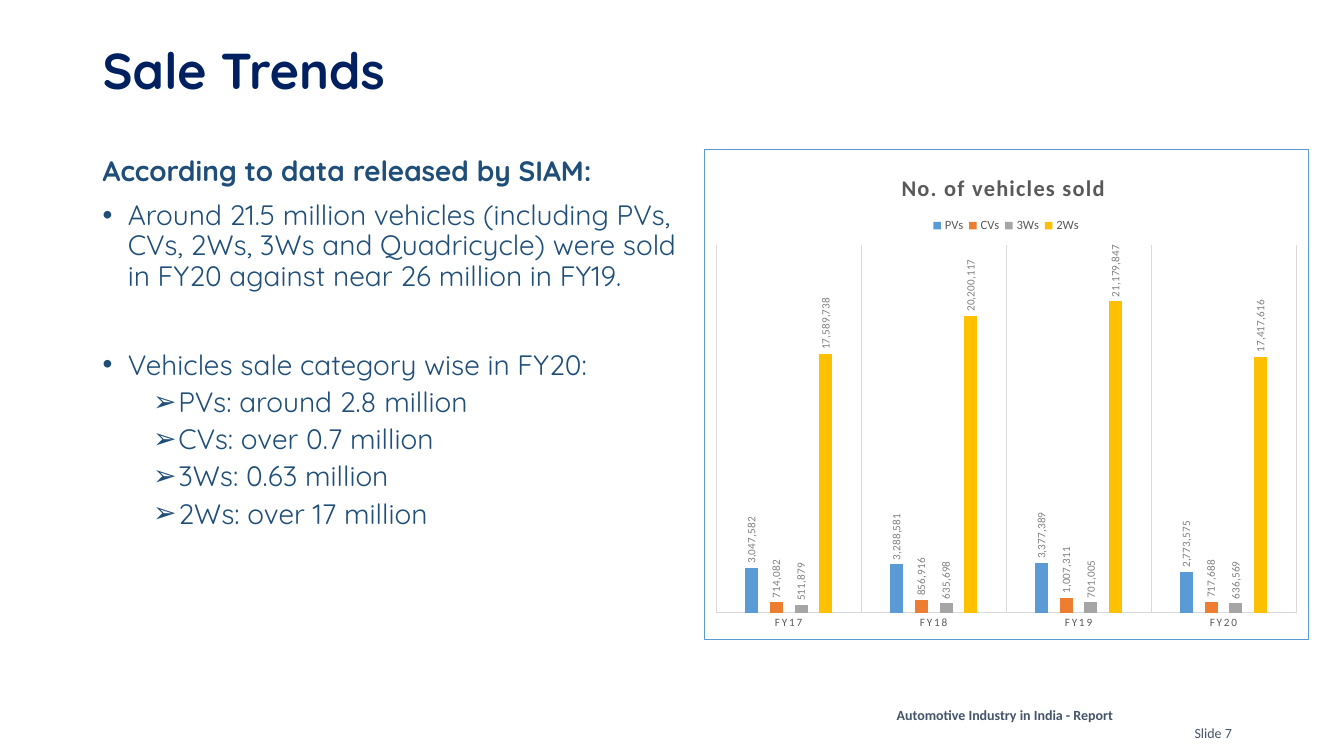
from lxml import etree
from pptx import Presentation
from pptx import util as u
from pptx.chart.data import CategoryChartData
from pptx.dml.color import RGBColor
from pptx.enum import chart as charts, text
from pptx.oxml import parse_xml
from pptx.oxml.ns import nsdecls, qn

# Content
TITLE = "Sale Trends"
FOOTER = "Automotive Industry in India - Report"
SLIDE_NUMBER = "Slide 7"
# (style, text, space before in points)
BODY = [
    ("heading", "According to data released by SIAM:", 0),
    ("bullet", "Around 21.5 million vehicles (including PVs, CVs, 2Ws, 3Ws and "
               "Quadricycle) were sold in FY20 against near 26 million in FY19.", 10),
    ("bullet", "Vehicles sale category wise in FY20:", 42),
    ("arrow", "PVs: around 2.8 million", 5),
    ("arrow", "CVs: over 0.7 million", 5),
    ("arrow", "3Ws: 0.63 million", 5),
    ("arrow", "2Ws: over 17 million", 5),
]
CHART_TITLE = "No. of vehicles sold"
YEARS = ["FY17", "FY18", "FY19", "FY20"]
SALES = {  # name: (colour, values)
    "PVs": ("5B9BD5", [3047582, 3288581, 3377389, 2773575]),
    "CVs": ("ED7D31", [714082, 856916, 1007311, 717688]),
    "3Ws": ("A5A5A5", [511879, 635698, 701005, 636569]),
    "2Ws": ("FFC000", [17589738, 20200117, 21179847, 17417616]),
}

# Formats
NAVY, BLUE, SLATE, GREY, RULE = "002060", "1F4E79", "44546A", "595959", "D9D9D9"
TITLE_FONT = dict(name="Quicksand", size=36, bold=True, color=NAVY)
BODY_FONT = dict(name="Quicksand", size=20, bold=False, color=BLUE)
FOOTER_FONT = dict(name="Calibri", size=10, color=SLATE)
CHART_FONT = dict(name="Calibri", size=10, color="000000")
BULLETS = {"bullet": ("•", 0.25, 0), "arrow": ("➢", 0.75, 1)}  # sign, indent, level
HANGING = 0.25
LEFT, TOP = 0.92, 0.4

# Shares of the chart's frame: left, top, width, height
PLOT_AREA = (0.02, 0.195, 0.96, 0.75)
LEGEND_AREA = (0.37, 0.135, 0.26, 0.04)
TITLE_AREA = (0.32, 0.04)


def rgb(value):
    return RGBColor.from_string(value)


def style(font, **values):
    for name, value in values.items():
        if name == "color":
            font.color.rgb = rgb(value)
        else:
            setattr(font, name, u.Pt(value) if name == "size" else value)


def add_text(slide, box, words, font, align=text.PP_ALIGN.LEFT, wrap=True):
    shape = slide.shapes.add_textbox(*map(u.Inches, box))
    shape.text_frame.word_wrap = wrap
    paragraph = shape.text_frame.paragraphs[0]
    paragraph.text, paragraph.alignment = words, align
    style(paragraph.runs[0].font, **font)
    return shape.text_frame


def add_bullet(paragraph, sign, indent, level):
    paragraph.level = level
    properties = paragraph._p.get_or_add_pPr()
    properties.set("marL", str(u.Inches(indent)))
    properties.set("indent", str(-u.Inches(HANGING)))
    for xml in (f'<a:buClr {nsdecls("a")}><a:srgbClr val="{BLUE}"/></a:buClr>',
                f'<a:buFont {nsdecls("a")} typeface="Arial"/>',
                f'<a:buChar {nsdecls("a")} char="{sign}"/>'):
        properties.append(parse_xml(xml))


def place(element, area, inner=False):
    """Lay out a chart part by shares of the chart's frame."""
    for old in element.findall(qn("c:layout")):
        element.remove(old)
    layout = etree.Element(qn("c:layout"))
    manual = etree.SubElement(layout, qn("c:manualLayout"))
    marks = [("layoutTarget", "inner")] if inner else []
    marks += [("xMode", "edge"), ("yMode", "edge")] + list(zip("xywh", area))
    for name, value in marks:
        etree.SubElement(manual, qn("c:" + name)).set("val", str(value))
    overlay = element.find(qn("c:overlay"))
    if overlay is None:
        element.insert(0, layout)
    else:
        overlay.addprevious(layout)


def add_sales_chart(slide, box):
    data = CategoryChartData(number_format="#,##0")
    data.categories = YEARS
    for name, (_, values) in SALES.items():
        data.add_series(name, values)
    chart = slide.shapes.add_chart(charts.XL_CHART_TYPE.COLUMN_CLUSTERED,
                                   *map(u.Inches, box), data).chart
    style(chart.font, **CHART_FONT)

    # Title and legend
    chart.has_title = chart.has_legend = True
    run = chart.chart_title.text_frame.paragraphs[0].add_run()
    run.text = CHART_TITLE
    style(run.font, name="Calibri", size=16, bold=True, color=GREY)
    run._r.get_or_add_rPr().set("spc", "100")
    chart.legend.position = charts.XL_LEGEND_POSITION.TOP
    chart.legend.include_in_layout = False
    style(chart.legend.font, name="Calibri", size=9, color=GREY)

    # Axes
    years, values = chart.category_axis, chart.value_axis
    values.visible = values.has_major_gridlines = False
    values.minimum_scale, values.maximum_scale = 0, 25_000_000
    years.has_major_gridlines = True
    years.major_tick_mark = charts.XL_TICK_MARK.NONE
    style(years.tick_labels.font, name="Calibri", size=8, color=GREY)
    years._element.find(".//" + qn("a:defRPr")).set("spc", "120")
    for line in (years.format.line, years.major_gridlines.format.line):
        line.color.rgb, line.width = rgb(RULE), u.Pt(0.75)

    # Columns with upright labels
    plot = chart.plots[0]
    plot.gap_width, plot.overlap, plot.vary_by_categories = 444, -90, False
    for series in plot.series:
        series.format.fill.solid()
        series.format.fill.fore_color.rgb = rgb(SALES[series.name][0])
        labels = series.data_labels
        labels.show_value = True
        labels.number_format, labels.number_format_is_linked = "#,##0", False
        labels.position = charts.XL_LABEL_POSITION.OUTSIDE_END
        style(labels.font, name="Calibri", size=8, color="808080")
        turn = labels._element.find(".//" + qn("a:bodyPr"))
        turn.set("rot", "-5400000")
        turn.set("vert", "horz")

    # Placement and frame
    space = chart._chartSpace
    place(space.chart.plotArea, PLOT_AREA, inner=True)
    place(chart.legend._element, LEGEND_AREA)
    place(chart.chart_title._element, TITLE_AREA)
    space.find(qn("c:txPr")).addprevious(parse_xml(
        f'<c:spPr {nsdecls("c", "a")}><a:solidFill><a:srgbClr val="FFFFFF"/></a:solidFill>'
        f'<a:ln w="{u.Pt(0.75)}"><a:solidFill><a:srgbClr val="5B9BD5"/></a:solidFill></a:ln>'
        '</c:spPr>'))


def main():
    presentation = Presentation()
    presentation.slide_width, presentation.slide_height = u.Inches(13.33), u.Inches(7.5)
    slide = presentation.slides.add_slide(presentation.slide_layouts[6])

    # Footer
    add_text(slide, (7.84, 6.96, 4.25, 0.27), FOOTER, dict(FOOTER_FONT, bold=True),
             text.PP_ALIGN.CENTER)
    add_text(slide, (11.75, 7.14, 0.66, 0.27), SLIDE_NUMBER, FOOTER_FONT, wrap=False)

    # Title
    frame = add_text(slide, (LEFT, TOP, 11.5, 0.66), TITLE, TITLE_FONT)
    frame.vertical_anchor = text.MSO_ANCHOR.MIDDLE
    frame.paragraphs[0].line_spacing = 0.9

    # Body
    body = slide.shapes.add_textbox(*map(u.Inches, (LEFT, 1.51, 6.07, 5.34))).text_frame
    body.word_wrap = True
    for index, (kind, words, before) in enumerate(BODY):
        paragraph = body.add_paragraph() if index else body.paragraphs[0]
        paragraph.line_spacing, paragraph.space_before = 0.9, u.Pt(before)
        if kind in BULLETS:
            add_bullet(paragraph, *BULLETS[kind])
        run = paragraph.add_run()
        run.text = words
        style(run.font, **dict(BODY_FONT, bold=kind == "heading"))

    # Chart
    add_sales_chart(slide, (6.98, 1.48, 6, 4.87))
    presentation.save("out.pptx")


if __name__ == "__main__":
    main()
